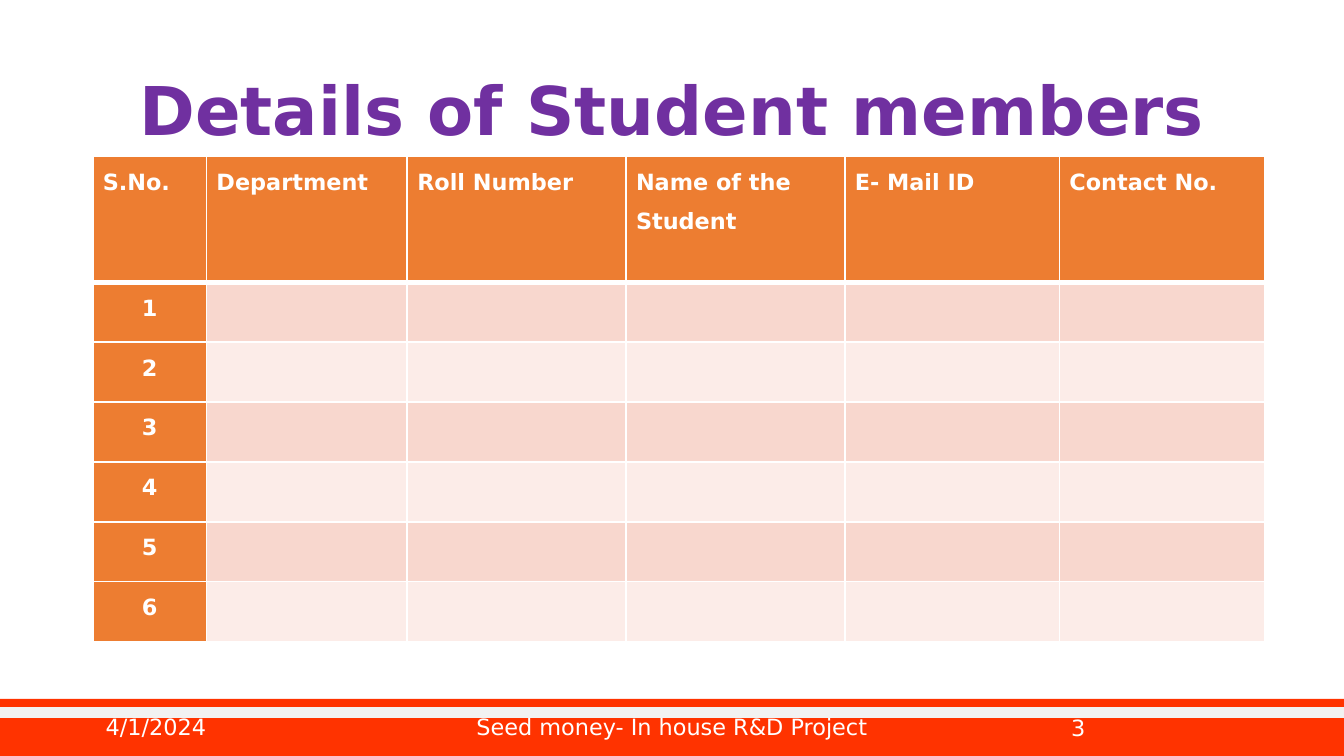
from lxml.etree import SubElement
from pptx import Presentation
from pptx.dml.color import RGBColor
from pptx.enum.shapes import MSO_CONNECTOR, MSO_SHAPE
from pptx.enum.text import MSO_ANCHOR, MSO_AUTO_SIZE, PP_ALIGN
from pptx.oxml.ns import qn
from pptx.util import Pt


def color(code):
    return RGBColor.from_string(code)


class Deck:
    """Hold the slide and its style, and draw each kind of element."""

    font = "DejaVu Sans"
    white = "FFFFFF"
    purple = "7030A0"
    red = "FF3300"
    gray = "F2F2F2"
    orange = "ED7D31"
    bands = ("F8D7CE", "FCECE8")

    def __init__(self, wide, high):
        self.prs = Presentation()
        self.prs.slide_width = Pt(wide)
        self.prs.slide_height = Pt(high)
        self.slide = self.prs.slides.add_slide(self.prs.slide_layouts[5])
        self.shapes = self.slide.shapes

    def text(self, frame, words, size, code, align, bold=False):
        para = frame.paragraphs[0]
        para.alignment = align
        run = para.add_run()
        run.text = words
        run.font.name = self.font
        run.font.size = Pt(size)
        run.font.bold = bold
        run.font.color.rgb = color(code)
        return para

    def title(self, words, x, y, w, h):
        shape = self.shapes.title
        shape.left, shape.top = Pt(x), Pt(y)
        shape.width, shape.height = Pt(w), Pt(h)
        frame = shape.text_frame
        frame.auto_size = MSO_AUTO_SIZE.NONE
        frame.vertical_anchor = MSO_ANCHOR.MIDDLE
        para = self.text(frame, words, 36, self.purple, PP_ALIGN.CENTER, True)
        para.line_spacing = 0.9

    def bar(self, x, y, w, h):
        shape = self.shapes.add_shape(
            MSO_SHAPE.RECTANGLE, Pt(x), Pt(y), Pt(w), Pt(h))
        shape.shadow.inherit = False
        shape.fill.solid()
        shape.fill.fore_color.rgb = color(self.red)
        shape.line.fill.background()

    def rule(self, x, y, end, width):
        line = self.shapes.add_connector(
            MSO_CONNECTOR.STRAIGHT, Pt(x), Pt(y), Pt(end), Pt(y))
        line.line.color.rgb = color(self.gray)
        line.line.width = Pt(width)
        SubElement(line._element.spPr, qn("a:effectLst"))

    def label(self, words, x, y, w, h, align):
        box = self.shapes.add_textbox(Pt(x), Pt(y), Pt(w), Pt(h))
        frame = box.text_frame
        frame.word_wrap = True
        frame.vertical_anchor = MSO_ANCHOR.MIDDLE
        self.text(frame, words, 12, self.white, align)

    def border(self, cell, base):
        props = cell._tc.get_or_add_tcPr()
        for side, width in zip("LRTB", (1, 1, 1, base)):
            line = SubElement(props, qn(f"a:ln{side}"), w=str(Pt(width)))
            fill = SubElement(line, qn("a:solidFill"))
            SubElement(fill, qn("a:srgbClr"), val=self.white)

    def cell(self, cell, words, code, align, base):
        self.border(cell, base)
        cell.fill.solid()
        cell.fill.fore_color.rgb = color(code)
        cell.margin_left = cell.margin_right = Pt(5.4)
        cell.margin_top = cell.margin_bottom = 0
        if words:
            para = self.text(
                cell.text_frame, words, 12, self.white, align, True)
            para.line_spacing = 1.5
            para.space_after = Pt(10)

    def table(self, heads, count, x, y, cols, top, step):
        high = top + count * step
        frame = self.shapes.add_table(
            count + 1, len(cols), Pt(x), Pt(y), Pt(sum(cols)), Pt(high))
        grid = frame.table
        for col, width in zip(grid.columns, cols):
            col.width = Pt(width)
        for i, row in enumerate(grid.rows):
            row.height = Pt(step if i else top)
            for j, cell in enumerate(row.cells):
                if i == 0:
                    self.cell(cell, heads[j], self.orange, PP_ALIGN.LEFT, 3)
                elif j == 0:
                    self.cell(cell, str(i), self.orange, PP_ALIGN.CENTER, 1)
                else:
                    band = self.bands[(i - 1) % 2]
                    self.cell(cell, "", band, PP_ALIGN.LEFT, 1)


def main():
    deck = Deck(720, 405)
    deck.bar(-1.5, 374.4, 721.5, 31)
    deck.rule(-1.5, 381.8, 720, 6)
    deck.title("Details of Student members", 49.5, 21.6, 621, 78.3)
    foot = 381.8
    deck.label("Seed money- In house R&D Project",
               238.5, foot, 243, 15.2, PP_ALIGN.CENTER)
    deck.label("3", 508.5, foot, 80, 15.8, PP_ALIGN.RIGHT)
    deck.label("4/1/2024", 49.5, foot, 162, 15.2, PP_ALIGN.LEFT)
    heads = ("S.No.", "Department", "Roll Number",
             "Name of the Student", "E- Mail ID", "Contact No.")
    deck.table(heads, 6, 49.7, 83.8,
               (60.9, 107.6, 117.2, 117.2, 115, 110), 67.4, 32.1)
    deck.prs.save("out.pptx")


if __name__ == "__main__":
    main()
